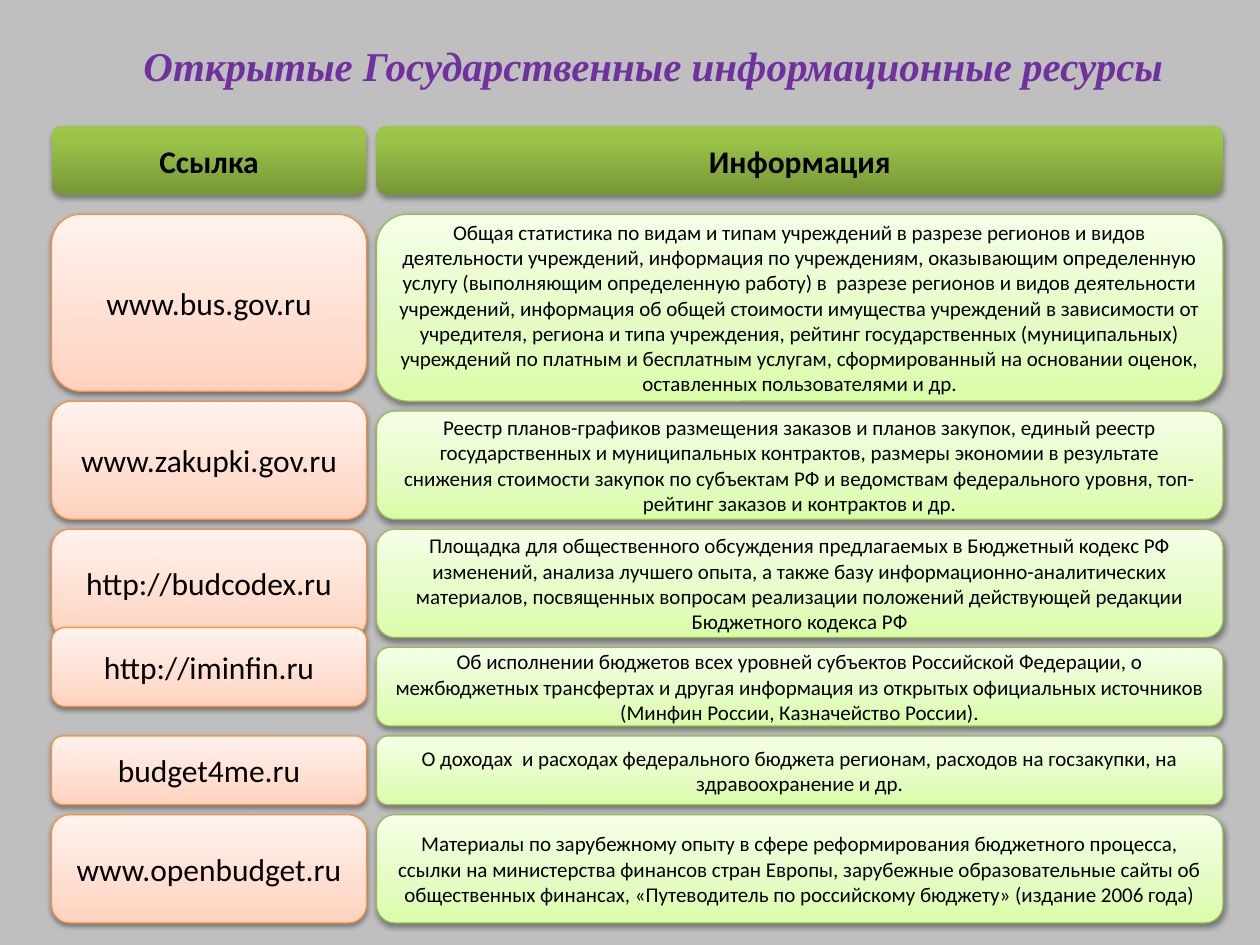
from pptx import Presentation
from pptx.dml.color import RGBColor
from pptx.enum.shapes import MSO_SHAPE
from pptx.enum.text import MSO_ANCHOR, PP_ALIGN
from pptx.oxml import parse_xml
from pptx.oxml.ns import nsdecls
from pptx.util import Inches, Pt

# Theme: gradient stops run from the bottom up; shadow is opacity %, distance pt
THEME = {
    "back": "BFBFBF", "ink": "000000", "title": "7030A0",
    "sans": "Calibri", "serif": "Times New Roman",
    "big": 23.4, "mid": 18, "small": 12,
    "head": {"stops": [(0, "779737"), (80, "9BC348"), (100, "9DC746")],
             "line": None, "shade": (35, 1.8)},
    "info": {"stops": [(0, "DAFDA7"), (35, "E4FCC2"), (100, "F5FFE7")],
             "line": "98B955", "shade": (38, 1.6)},
    "link": {"stops": [(0, "FFD2BD"), (35, "FFDED0"), (100, "FFF2ED")],
             "line": "F69240", "shade": (38, 1.6)},
}

# Grid: square cells, 96 to the slide's height
WIDE, HIGH = Inches(10), Inches(7.5)
CELL = HIGH / 96
LEFT, HEAD, BODY = Inches(0.41), Inches(1), Inches(1.7)
GAP, LINKW, INFOW = 1, 32, 86
INFOX = LEFT + (LINKW + GAP) * CELL

# Rows: link, its height, its lift above the row, info height, info (in cells)
ROWS = [
    ("www.bus.gov.ru", 18, 0, 19,
     "Общая статистика по видам и типам учреждений в разрезе регионов и видов "
     "деятельности учреждений, информация по учреждениям, оказывающим "
     "определенную услугу (выполняющим определенную работу) в  разрезе регионов "
     "и видов деятельности учреждений, информация об общей стоимости имущества "
     "учреждений в зависимости от учредителя, региона и типа учреждения, рейтинг "
     "государственных (муниципальных) учреждений по платным и бесплатным услугам, "
     "сформированный на основании оценок, оставленных пользователями и др."),
    ("www.zakupki.gov.ru", 12, 1, 11,
     "Реестр планов-графиков размещения заказов и планов закупок, единый реестр "
     "государственных и муниципальных контрактов, размеры экономии в результате "
     "снижения стоимости закупок по субъектам РФ и ведомствам федерального "
     "уровня, топ-рейтинг заказов и контрактов и др."),
    ("http://budcodex.ru", 11, 0, 11,
     "Площадка для общественного обсуждения предлагаемых в Бюджетный кодекс РФ "
     "изменений, анализа лучшего опыта, а также базу информационно-аналитических "
     "материалов, посвященных вопросам реализации положений действующей редакции "
     "Бюджетного кодекса РФ"),
    ("http://iminfin.ru", 8, 2, 8,
     "Об исполнении бюджетов всех уровней субъектов Российской Федерации, о "
     "межбюджетных трансфертах и другая информация из открытых официальных "
     "источников (Минфин России, Казначейство России)."),
    ("budget4me.ru", 7, 0, 7,
     "О доходах  и расходах федерального бюджета регионам, расходов на "
     "госзакупки, на здравоохранение и др."),
    ("www.openbudget.ru", 11, 0, 11,
     "Материалы по зарубежному опыту в сфере реформирования бюджетного процесса, "
     "ссылки на министерства финансов стран Европы, зарубежные образовательные "
     "сайты об общественных финансах, «Путеводитель по российскому бюджету» "
     "(издание 2006 года)"),
]


def write(shape, text, size, face="sans", ink="ink", bold=False, slant=False):
    frame = shape.text_frame
    frame.word_wrap = True
    frame.vertical_anchor = MSO_ANCHOR.MIDDLE
    para = frame.paragraphs[0]
    para.alignment = PP_ALIGN.CENTER
    run = para.add_run()
    run.text = text
    font = run.font
    font.name, font.size = THEME[face], Pt(THEME[size])
    font.bold, font.italic = bold, slant
    font.color.rgb = RGBColor.from_string(THEME[ink])


def card(x, y, cols, rows, kind, text, size):
    look = THEME[kind]
    shape = slide.shapes.add_shape(MSO_SHAPE.ROUNDED_RECTANGLE, round(x), round(y),
                                   round(cols * CELL), round(rows * CELL))
    # Three-stop gradient
    shape.fill.gradient()
    props = shape.element.spPr
    stops = "".join(f'<a:gs pos="{pos * 1000}"><a:srgbClr val="{tint}"/></a:gs>'
                    for pos, tint in look["stops"])
    props.replace(props.find("{*}gradFill"), parse_xml(
        f'<a:gradFill {nsdecls("a")} rotWithShape="1"><a:gsLst>{stops}</a:gsLst>'
        '<a:lin ang="16200000" scaled="0"/></a:gradFill>'))
    # Outline
    if look["line"]:
        shape.line.color.rgb = RGBColor.from_string(look["line"])
        shape.line.width = Pt(0.75)
    else:
        shape.line.fill.background()
    # Soft shadow below
    shape.shadow.inherit = False
    alpha, dist = look["shade"]
    props.find("{*}effectLst").append(parse_xml(
        f'<a:outerShdw {nsdecls("a")} blurRad="{Pt(3.1)}" dist="{Pt(dist)}" '
        f'dir="5400000" rotWithShape="0"><a:srgbClr val="{THEME["ink"]}">'
        f'<a:alpha val="{alpha * 1000}"/></a:srgbClr></a:outerShdw>'))
    write(shape, text, size, bold=kind == "head")


deck = Presentation()
deck.slide_width, deck.slide_height = WIDE, HIGH
slide = deck.slides.add_slide(deck.slide_layouts[6])
back = slide.background.fill
back.solid()
back.fore_color.rgb = RGBColor.from_string(THEME["back"])

# Title
title = slide.shapes.add_textbox(Inches(0.67), Inches(0.28), Inches(9.03), Inches(0.48))
write(title, "Открытые Государственные информационные ресурсы", "big",
      "serif", "title", bold=True, slant=True)

# Column heads
card(LEFT, HEAD, LINKW, 7, "head", "Ссылка", "mid")
card(INFOX, HEAD, INFOW, 7, "head", "Информация", "mid")

# Rows of links and what they offer
top = BODY
for link, tall, lift, rows, info in ROWS:
    card(INFOX, top, INFOW, rows, "info", info, "small")
    card(LEFT, top - lift * CELL, LINKW, tall, "link", link, "mid")
    top += (rows + GAP) * CELL

deck.save("out.pptx")
